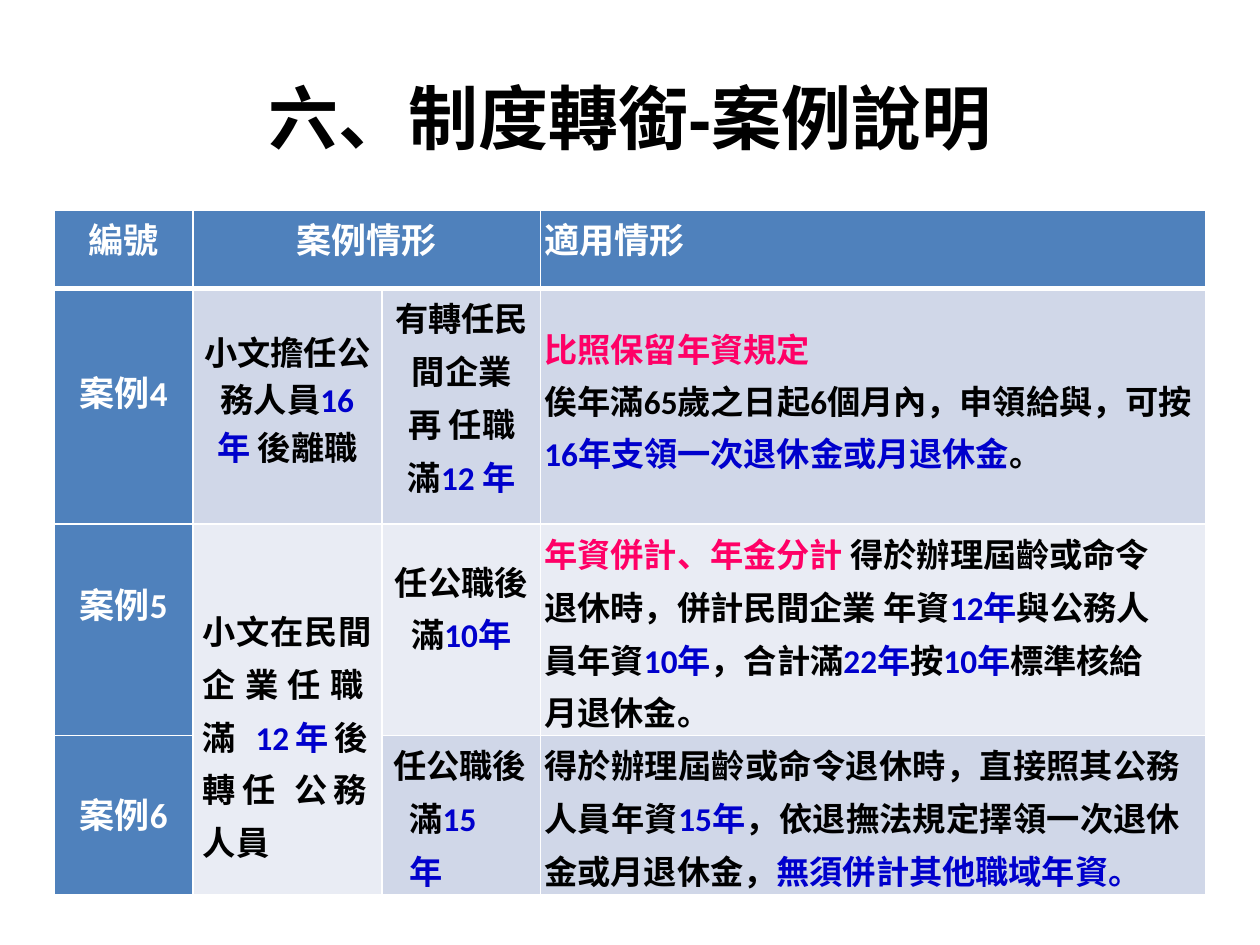
from itertools import groupby

from pptx import Presentation
from pptx.dml.color import RGBColor
from pptx.enum import text
from pptx.oxml import parse_xml
from pptx.oxml.ns import nsdecls
from pptx.util import Pt

WHITE = RGBColor(0xFF, 0xFF, 0xFF)
BLACK = RGBColor(0, 0, 0)
BLUE = RGBColor(0, 0, 0xCC)
PINK = RGBColor(0xFF, 0, 0x66)
HEADER = RGBColor(0x4F, 0x81, 0xBC)
BAND_DARK = RGBColor(0xD0, 0xD7, 0xE8)
BAND_LIGHT = RGBColor(0xE9, 0xEC, 0xF4)

LEFT, CENTER, JUSTIFY = (text.PP_ALIGN.LEFT, text.PP_ALIGN.CENTER,
                         text.PP_ALIGN.JUSTIFY)
CJK_FONT, DIGIT_FONT = "Noto Sans CJK TC", "Calibri"
TITLE = "六、制度轉銜-案例說明"
COLUMN_WIDTHS = [79.2, 108, 90.7, 380.2]
ROW_HEIGHTS = [44.6, 117.4, 113, 84.2]
MERGES = [((0, 1), (0, 2)), ((2, 1), (3, 1))]


def label(words, top, align=CENTER, left=0):
    return dict(paragraphs=[[(words, WHITE)]], size=20, fill=HEADER,
                align=align, margins=(left, top, 0))


def body(fill, paragraphs, margins, align=LEFT, spacing=1.1, hanging=None):
    """Margins are left, top and right; hanging is left indent and outdent."""
    return dict(paragraphs=paragraphs, size=19, fill=fill, align=align,
                margins=margins, spacing=spacing, hanging=hanging)


CELLS = {
    (0, 0): label("編號", 1),
    (0, 1): label("案例情形", 1),
    (0, 3): label("適用情形", 1, LEFT, 2.2),
    (1, 0): label("案例4", 44),
    (1, 1): body(BAND_DARK, [[("小文擔任公\n務人員", BLACK), ("16\n年", BLUE),
                              (" 後離職", BLACK)]],
                 (5.8, 22, 5.8), CENTER, 0.99),
    (1, 2): body(BAND_DARK, [[("有轉任民\n間企業\n再 任職\n滿", BLACK),
                              ("12 年", BLUE)]], (6.5, 0, 6), CENTER),
    (1, 3): body(BAND_DARK, [
        [("比照保留年資規定", PINK)],
        [("俟年滿65歲之日起6個月內，申領給與，可按", BLACK)],
        [("16年支領一次退休金或月退休金", BLUE), ("。", BLACK)],
    ], (2.2, 20, 0), spacing=1),
    (2, 0): label("案例5", 31),
    (2, 1): body(BAND_LIGHT, [[("小文在民間\n企業任職\n滿 ", BLACK),
                               ("12年", BLUE),
                               ("後\n轉任 公務\n人員", BLACK)]],
                 (5.8, 44, 5), JUSTIFY),
    (2, 2): body(BAND_LIGHT, [[("任公職後", BLACK)],
                              [("滿", BLACK), ("10年", BLUE)]],
                 (0, 19, 0), CENTER, 1),
    (2, 3): body(BAND_LIGHT, [[
        ("年資併計、年金分計 ", PINK),
        ("得於辦理屆齡或命令退休時，併計民間企業 年資", BLACK),
        ("12年", BLUE), ("與公務人員年資", BLACK), ("10年", BLUE),
        ("，合計滿", BLACK), ("22年", BLUE), ("按", BLACK), ("10年", BLUE),
        ("標準核給月退休金。", BLACK)]], (2.2, 0, 18)),
    (3, 0): label("案例6", 30),
    (3, 2): body(BAND_DARK, [[("任公職後\n滿", BLACK), ("15\n年", BLUE)]],
                 (0, 0, 0), hanging=(15.8, -9.4)),
    (3, 3): body(BAND_DARK, [[
        ("得於辦理屆齡或命令退休時，直接照其公務 人員年資", BLACK),
        ("15年", BLUE),
        ("，依退撫法規定擇領一次退休 金或月退休金，", BLACK),
        ("無須併計其他職域年資。", BLUE)]], (2.2, 0, 14.4), JUSTIFY),
}


def add_words(paragraph, words, colour):
    """Add runs, giving digits their own font and breaking at newlines."""
    for number, line in enumerate(words.split("\n")):
        if number:
            paragraph.add_line_break()
        for is_digit, letters in groupby(line, str.isdecimal):
            run = paragraph.add_run()
            run.text = "".join(letters)
            run.font.name = DIGIT_FONT if is_digit else CJK_FONT
            run.font.color.rgb = colour


def set_borders(cell, row):
    widths = {"L": 1, "R": 1, "T": 3 if row == 1 else 1,
              "B": 3 if row == 0 else 1}
    for position, (side, width) in enumerate(widths.items()):
        cell._tc.get_or_add_tcPr().insert(position, parse_xml(
            f'<a:ln{side} {nsdecls("a")} w="{Pt(width)}"><a:solidFill>'
            f'<a:srgbClr val="{WHITE}"/></a:solidFill></a:ln{side}>'))


def fill_cell(cell, content):
    cell.fill.solid()
    cell.fill.fore_color.rgb = content["fill"]
    left, top, right = content["margins"]
    cell.margin_left, cell.margin_top = Pt(left), Pt(top)
    cell.margin_right, cell.margin_bottom = Pt(right), Pt(0)
    frame = cell.text_frame
    for number, pieces in enumerate(content["paragraphs"]):
        paragraph = frame.add_paragraph() if number else frame.paragraphs[0]
        paragraph.alignment = content["align"]
        paragraph.line_spacing = content.get("spacing", 1.0)
        if number:
            paragraph.space_before = Pt(2.2)
        if content.get("hanging"):
            indent, outdent = content["hanging"]
            properties = paragraph._p.get_or_add_pPr()
            properties.set("marL", str(Pt(indent)))
            properties.set("indent", str(Pt(outdent)))
        paragraph.font.size = Pt(content["size"])
        paragraph.font.bold = True
        for words, colour in pieces:
            add_words(paragraph, words, colour)


def main():
    presentation = Presentation()
    presentation.slide_width, presentation.slide_height = Pt(720), Pt(540)
    slide = presentation.slides.add_slide(presentation.slide_layouts[5])

    title = slide.shapes.title
    title.left, title.top, title.width, title.height = (
        Pt(36), Pt(21.6), Pt(648), Pt(90))
    title.text_frame.text = TITLE
    title.text_frame.vertical_anchor = text.MSO_ANCHOR.MIDDLE
    paragraph = title.text_frame.paragraphs[0]
    paragraph.alignment = CENTER
    paragraph.font.name = "Arial"
    paragraph.font.size = Pt(40)
    paragraph.font.bold = True
    paragraph.font.color.rgb = BLACK

    table = slide.shapes.add_table(
        len(ROW_HEIGHTS), len(COLUMN_WIDTHS), Pt(31), Pt(120.4),
        Pt(sum(COLUMN_WIDTHS)), Pt(sum(ROW_HEIGHTS))).table
    for column, width in zip(table.columns, COLUMN_WIDTHS):
        column.width = Pt(width)
    for row, height in zip(table.rows, ROW_HEIGHTS):
        row.height = Pt(height)
    for first, last in MERGES:
        table.cell(*first).merge(table.cell(*last))
    for place, content in CELLS.items():
        fill_cell(table.cell(*place), content)
    for row in range(len(ROW_HEIGHTS)):
        for column in range(len(COLUMN_WIDTHS)):
            set_borders(table.cell(row, column), row)
    presentation.save("out.pptx")


if __name__ == "__main__":
    main()
